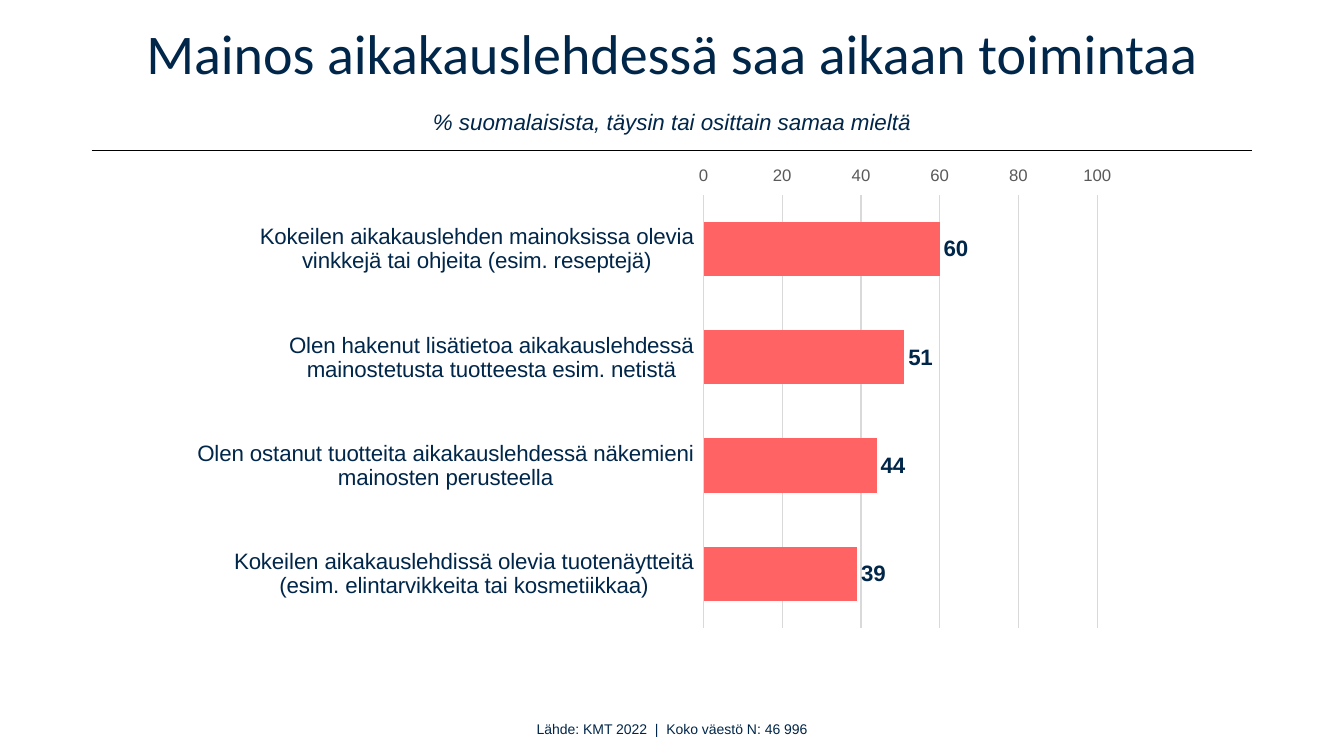
from lxml import etree
from pptx import Presentation
from pptx.chart.data import CategoryChartData
from pptx.dml.color import RGBColor
from pptx.enum.chart import (XL_CHART_TYPE, XL_LABEL_POSITION, XL_TICK_LABEL_POSITION,
                             XL_TICK_MARK)
from pptx.enum.shapes import MSO_CONNECTOR
from pptx.enum.text import MSO_ANCHOR, MSO_AUTO_SIZE, PP_ALIGN
from pptx.oxml.ns import qn
from pptx.util import Pt

BAR = XL_CHART_TYPE.BAR_CLUSTERED
OUTSIDE_END = XL_LABEL_POSITION.OUTSIDE_END
HIGH = XL_TICK_LABEL_POSITION.HIGH
LOW = XL_TICK_LABEL_POSITION.LOW
NO_TICK = XL_TICK_MARK.NONE
STRAIGHT = MSO_CONNECTOR.STRAIGHT
MIDDLE = MSO_ANCHOR.MIDDLE
NO_AUTOFIT = MSO_AUTO_SIZE.NONE
CENTER = PP_ALIGN.CENTER

HEADING = "Mainos aikakauslehdessä saa aikaan toimintaa"
SUBHEADING = "% suomalaisista, täysin tai osittain samaa mieltä"
SOURCE = "Lähde: KMT 2022  |  Koko väestö N: 46 996"
# Listed from the bottom bar to the top bar
ANSWERS = [
    ("Kokeilen aikakauslehdissä olevia tuotenäytteitä (esim. elintarvikkeita tai kosmetiikkaa)", 39),
    ("Olen ostanut tuotteita aikakauslehdessä näkemieni mainosten perusteella", 44),
    ("Olen hakenut lisätietoa aikakauslehdessä mainostetusta tuotteesta esim. netistä", 51),
    ("Kokeilen aikakauslehden mainoksissa olevia vinkkejä tai ohjeita (esim. reseptejä)", 60),
]
COLORS = {"navy": "002649", "rule": "000000", "bar": "FF6363",
          "grid": "D9D9D9", "scale": "595959"}

SLIDE_W, SLIDE_H = 960, 540
TITLE_BOX = (66, 23, 828, 77)
RULE_X, RULE_Y = 65.5, 107.3
CHART_BOX = (141, 119.5, 678, 358.6)
PLOT = {"x": 0.532, "y": 0.05, "w": 0.416, "h": 0.867}
SOURCE_BOX = (372.25, 511.2, 215.5, 19.4)


def color(name):
    return RGBColor.from_string(COLORS[name])


def points(box):
    return [Pt(length) for length in box]


def style(font, size, color_name="navy", name="Arial", bold=False, italic=False):
    font.size, font.name, font.bold, font.italic = Pt(size), name, bold, italic
    font.color.rgb = color(color_name)


def draw_line(line, color_name, width):
    line.color.rgb = color(color_name)
    line.width = Pt(width)


def add_run(paragraph, text, size, **look):
    run = paragraph.add_run()
    run.text = text
    style(run.font, size, **look)


def add_heading(slide):
    title = slide.shapes.title
    title.left, title.top, title.width, title.height = points(TITLE_BOX)
    frame = title.text_frame
    frame.vertical_anchor = MIDDLE
    frame.auto_size = NO_AUTOFIT
    paragraph = frame.paragraphs[0]
    paragraph.alignment = CENTER
    paragraph.line_spacing = Pt(35)
    paragraph.space_before, paragraph.space_after = Pt(0), Pt(18)
    add_run(paragraph, HEADING, 40, name="Calibri")
    paragraph.add_line_break()
    add_run(paragraph, SUBHEADING, 16, italic=True)

    rule = slide.shapes.add_connector(
        STRAIGHT, *points((RULE_X, RULE_Y, SLIDE_W - RULE_X, RULE_Y)))
    draw_line(rule.line, "rule", 1)
    etree.SubElement(rule._element.spPr, qn("a:effectLst"))


def place_plot(chart):
    """Fix the inner plot area as fractions of the chart."""
    plot_area = chart._chartSpace.chart.plotArea
    for old in plot_area.findall(qn("c:layout")):
        plot_area.remove(old)
    layout = etree.Element(qn("c:layout"))
    plot_area.insert(0, layout)
    manual = etree.SubElement(layout, qn("c:manualLayout"))
    settings = {"layoutTarget": "inner", "xMode": "edge", "yMode": "edge", **PLOT}
    for tag, value in settings.items():
        etree.SubElement(manual, qn("c:" + tag)).set("val", str(value))


def add_answers_chart(slide):
    data = CategoryChartData(number_format="#,##0")
    data.categories = [answer for answer, _ in ANSWERS]
    data.add_series("Series 1", [share for _, share in ANSWERS])
    chart = slide.shapes.add_chart(BAR, *points(CHART_BOX), data).chart
    chart.has_legend = chart.has_title = False
    style(chart.font, 12, "rule", "Calibri")
    place_plot(chart)

    answers = chart.category_axis
    answers.tick_label_position = LOW
    style(answers.tick_labels.font, 16)
    draw_line(answers.format.line, "grid", 0.75)

    scale = chart.value_axis
    scale.minimum_scale, scale.maximum_scale, scale.major_unit = 0, 100, 20
    scale.tick_label_position = HIGH
    style(scale.tick_labels.font, 12, "scale")
    scale.format.line.fill.background()
    scale.has_major_gridlines = True
    draw_line(scale.major_gridlines.format.line, "grid", 0.75)
    for axis in (answers, scale):
        axis.major_tick_mark = axis.minor_tick_mark = NO_TICK

    plot = chart.plots[0]
    plot.gap_width = 100
    plot.vary_by_categories = False
    bars = plot.series[0]
    bars.format.fill.solid()
    bars.format.fill.fore_color.rgb = color("bar")
    labels = bars.data_labels
    labels.show_value = True
    labels.position = OUTSIDE_END
    labels.number_format, labels.number_format_is_linked = "#,##0", False
    style(labels.font, 16, bold=True)


def add_source(slide):
    frame = slide.shapes.add_textbox(*points(SOURCE_BOX)).text_frame
    frame.word_wrap = True
    frame.paragraphs[0].alignment = CENTER
    add_run(frame.paragraphs[0], SOURCE, 10)


def main():
    deck = Presentation()
    deck.slide_width, deck.slide_height = Pt(SLIDE_W), Pt(SLIDE_H)
    slide = deck.slides.add_slide(deck.slide_layouts.get_by_name("Title Only"))
    add_heading(slide)
    add_answers_chart(slide)
    add_source(slide)
    deck.save("out.pptx")


if __name__ == "__main__":
    main()
